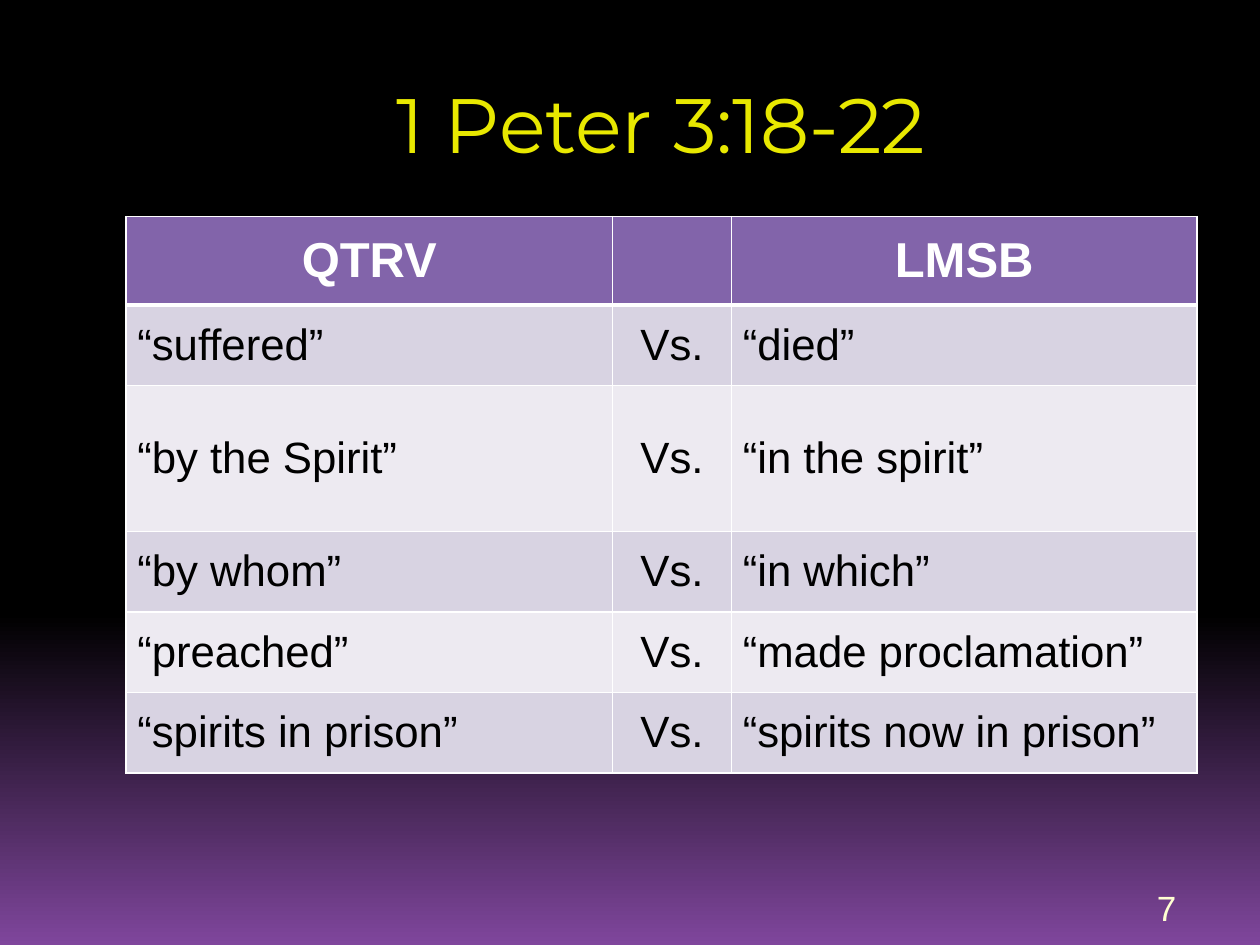
from copy import deepcopy

from lxml import etree
from pptx import Presentation
from pptx.dml.color import RGBColor
from pptx.enum.text import MSO_ANCHOR, PP_ALIGN
from pptx.oxml.ns import qn
from pptx.util import Pt

LEFT, CENTER = PP_ALIGN.LEFT, PP_ALIGN.CENTER
TOP, MIDDLE, BOTTOM = MSO_ANCHOR.TOP, MSO_ANCHOR.MIDDLE, MSO_ANCHOR.BOTTOM

BLACK = RGBColor(0x00, 0x00, 0x00)
WHITE = RGBColor(0xFF, 0xFF, 0xFF)
PURPLE = RGBColor(0x7F, 0x46, 0x9C)
HEADER = RGBColor(0x82, 0x64, 0xAA)
BAND_DARK = RGBColor(0xD8, 0xD3, 0xE2)
BAND_LIGHT = RGBColor(0xED, 0xEA, 0xF1)
PALE_YELLOW = RGBColor(0xFF, 0xFF, 0xA3)
YELLOW = RGBColor(0xE8, 0xE8, 0x00)
OLIVE = RGBColor(0x74, 0x74, 0x00)
CREAM = RGBColor(0xFF, 0xFF, 0xD2)


def write(frame, text, size, color=None, font="Arial", bold=False, align=LEFT):
    para = frame.paragraphs[0]
    para.alignment = align
    span = para.add_run()
    span.text = text
    span.font.name = font
    span.font.size = Pt(size)
    span.font.bold = bold
    if color is not None:
        span.font.color.rgb = color
    return span


def shade_downward(fill, stops):
    fill.gradient()
    fill.gradient_angle = 270
    first = fill.gradient_stops[0]._gs
    first.addnext(deepcopy(first))
    for stop, (position, color) in zip(fill.gradient_stops, stops):
        stop.position = position
        stop.color.rgb = color


deck = Presentation()
deck.slide_width, deck.slide_height = Pt(720), Pt(540)
page = deck.slides.add_slide(deck.slide_layouts[5])
shade_downward(page.background.fill, [(0, BLACK), (0.65, BLACK), (1, PURPLE)])

title = page.shapes.title
title.left, title.top, title.width, title.height = Pt(72), Pt(40), Pt(612), Pt(72)
title.text_frame.word_wrap = True
title.text_frame.vertical_anchor = TOP
title_span = write(title.text_frame, "1 Peter 3:18-22", 44, font="Montserrat", align=CENTER)
shade_downward(title_span.font.fill, [(0, PALE_YELLOW), (0.5, YELLOW), (1, OLIVE)])

rows = [
    ("QTRV", "", "LMSB"),
    ("“suffered”", "Vs.", "“died”"),
    ("“by the Spirit”", "Vs.", "“in the spirit”"),
    ("“by whom”", "Vs.", "“in which”"),
    ("“preached”", "Vs.", "“made proclamation”"),
    ("“spirits in prison”", "Vs.", "“spirits now in prison”"),
]
column_widths = [278, 68, 266]
row_heights = [50.5, 46, 83.5, 46, 46, 46]

table = page.shapes.add_table(
    len(rows), len(column_widths), Pt(72), Pt(123.8), Pt(sum(column_widths)), Pt(sum(row_heights))
).table
table.horz_banding = False
for column, width in zip(table.columns, column_widths):
    column.width = Pt(width)
for row, height in zip(table.rows, row_heights):
    row.height = Pt(height)

for row_index, texts in enumerate(rows):
    is_header = row_index == 0
    band = HEADER if is_header else BAND_DARK if row_index % 2 else BAND_LIGHT
    text_size, text_color = (28, WHITE) if is_header else (25, BLACK)
    line_widths = {
        "a:lnL": 1,
        "a:lnR": 1,
        "a:lnT": 3 if row_index == 1 else 1,
        "a:lnB": 3 if is_header else 1,
    }
    for column_index, text in enumerate(texts):
        cell = table.cell(row_index, column_index)
        cell.margin_left = cell.margin_right = Pt(6.5)
        cell.margin_top = cell.margin_bottom = Pt(3.6)
        cell.vertical_anchor = MIDDLE
        cell.fill.solid()
        cell.fill.fore_color.rgb = band
        if text:
            align = CENTER if is_header or column_index == 1 else LEFT
            write(cell.text_frame, text, text_size, text_color, bold=is_header, align=align)
        properties = cell._tc.get_or_add_tcPr()
        for position, (tag, width) in enumerate(line_widths.items()):
            line = etree.Element(qn(tag), w=str(Pt(width)))
            solid = etree.SubElement(line, qn("a:solidFill"))
            etree.SubElement(solid, qn("a:srgbClr"), val=str(WHITE))
            properties.insert(position, line)

number_box = page.shapes.add_textbox(Pt(654), Pt(505.5), Pt(60), Pt(28.5))
number_box.text_frame.word_wrap = True
number_box.text_frame.vertical_anchor = BOTTOM
write(number_box.text_frame, "7", 20, CREAM)

deck.save("out.pptx")
